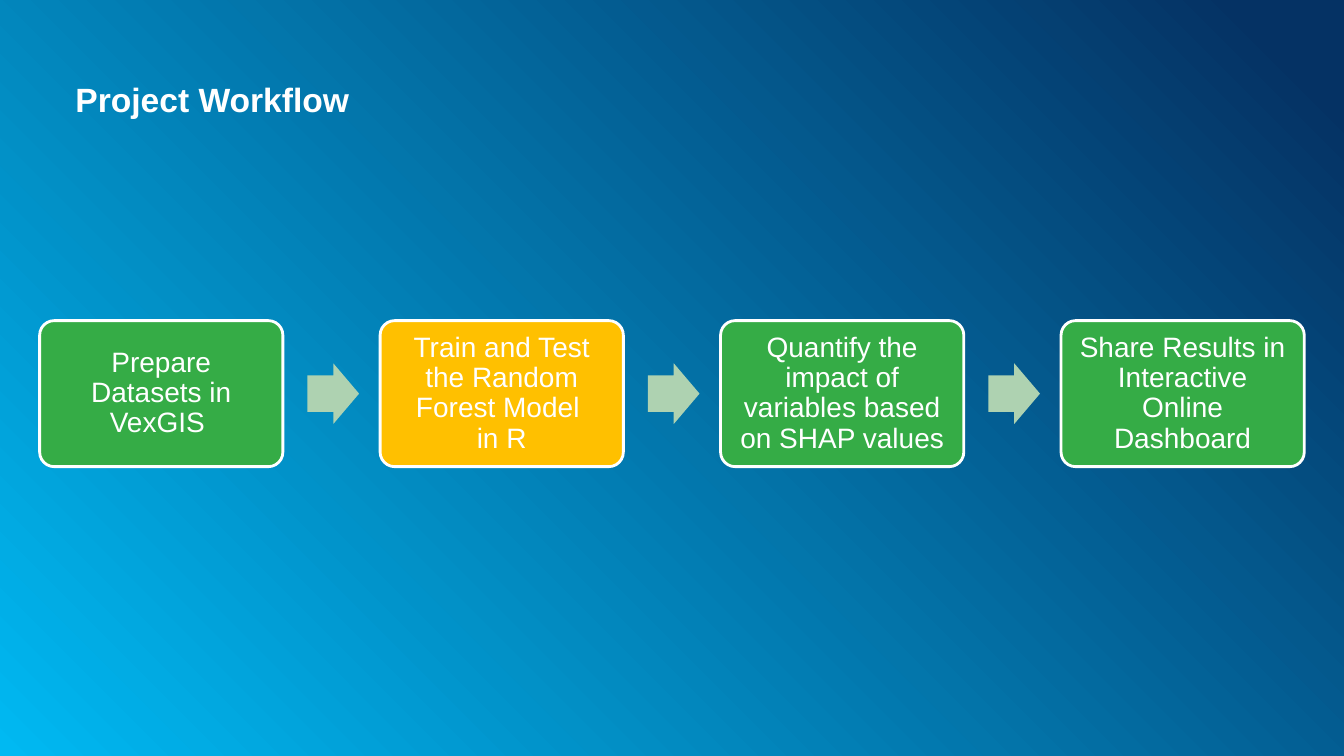
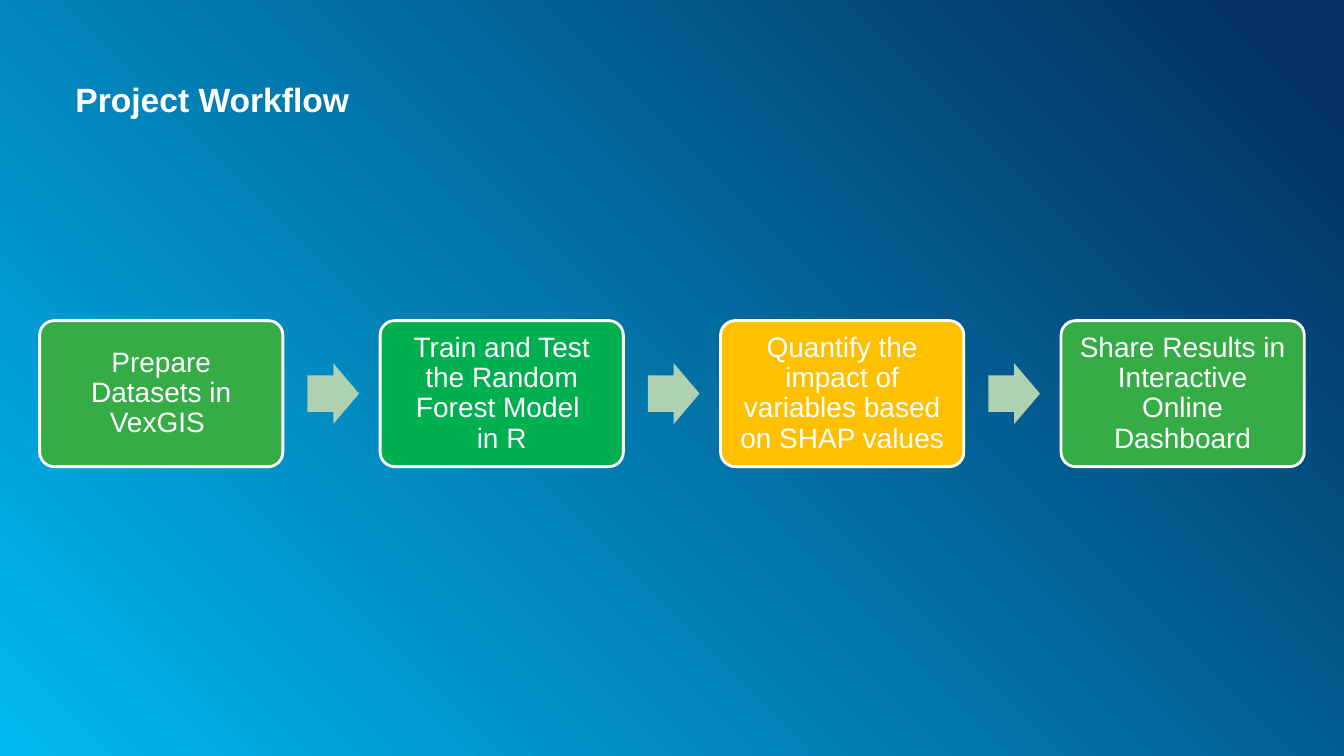
from lxml import etree
from pptx import Presentation
from pptx import util as u
from pptx.dml.color import RGBColor
from pptx.enum import shapes, text
from pptx.oxml.ns import qn

COLORS = {
    "white": "FFFFFF",
    "sky": "00B9F2",
    "navy": "053264",
    "step": "35AC46",
    "done": "00B050",
    "current": "FFC000",
    "arrow": "AED2B1",
}

# Each step is a list of lines; a single line wraps by itself
STEPS = [
    ["Prepare Datasets in VexGIS "],
    ["Train and Test the Random Forest Model ", "in R"],
    ["Quantify the impact of variables based on SHAP values"],
    ["Share Results in Interactive Online Dashboard"],
]

# Step colours, one row per slide
SLIDES = [
    ["step", "current", "step", "step"],
    ["step", "done", "current", "step"],
]

# Workflow row, in centimetres
ROW_LEFT, ROW_MIDDLE, PITCH = 1, 9.92, 8.58
BOX_W, BOX_H = 6.13, 3.68
ARROW_OFFSET, ARROW_W, ARROW_H = 6.75, 1.3, 1.53


class Deck:
    """Shared style and the slide being built."""

    font = "Arial"

    def __init__(self):
        self.prs = Presentation()
        self.prs.slide_width, self.prs.slide_height = u.Cm(33.87), u.Cm(19.05)
        self.slide = None
        self.background()

    def color(self, name):
        return RGBColor.from_string(COLORS[name])

    def background(self):
        """Radial gradient from the bottom left corner, on the master."""
        master = self.prs.slide_master
        fill = master.background.fill
        fill.gradient()
        for stop, name, position in zip(fill.gradient_stops, ("sky", "navy"), (0, 0.95)):
            stop.color.rgb = self.color(name)
            stop.position = position
        grad = master.element.find(".//" + qn("a:gradFill"))
        grad.remove(grad.find(qn("a:lin")))
        circle = etree.SubElement(grad, qn("a:path"), {"path": "circle"})
        etree.SubElement(circle, qn("a:fillToRect"), {"t": "100000", "r": "100000"})

    def run(self, p, words, size, bold=False):
        r = p.add_run()
        r.text = words
        r.font.name, r.font.size, r.font.bold = self.font, u.Pt(size), bold
        r.font.color.rgb = self.color("white")

    def new_slide(self, title):
        self.slide = self.prs.slides.add_slide(self.prs.slide_layouts[5])
        sp = self.slide.shapes.title
        sp.left, sp.top, sp.width, sp.height = map(u.Cm, (1.9, 1.9, 30.07, 1.88))
        tf = sp.text_frame
        tf.auto_size = text.MSO_AUTO_SIZE.NONE
        tf.vertical_anchor = text.MSO_ANCHOR.TOP
        tf.margin_left = tf.margin_right = tf.margin_bottom = 0
        tf.margin_top = u.Cm(0.08)
        p = tf.paragraphs[0]
        p.alignment = text.PP_ALIGN.LEFT
        self.run(p, title, 24, bold=True)

    def shape(self, kind, left, width, height, fill):
        """Add a plain filled shape, centred on the workflow row."""
        top = ROW_MIDDLE - height / 2
        sp = self.slide.shapes.add_shape(kind, *map(u.Cm, (left, top, width, height)))
        sp.shadow.inherit = False
        sp.fill.solid()
        sp.fill.fore_color.rgb = self.color(fill)
        sp.line.fill.background()
        return sp

    def step(self, left, lines, fill):
        sp = self.shape(shapes.MSO_SHAPE.ROUNDED_RECTANGLE, left, BOX_W, BOX_H, fill)
        sp.adjustments[0] = 0.1
        sp.line.color.rgb = self.color("white")
        sp.line.width = u.Pt(2)
        tf = sp.text_frame
        tf.word_wrap = True
        tf.vertical_anchor = text.MSO_ANCHOR.MIDDLE
        tf.margin_left = tf.margin_right = tf.margin_top = tf.margin_bottom = u.Cm(0.28)
        p = tf.paragraphs[0]
        p.alignment = text.PP_ALIGN.CENTER
        p.line_spacing = 0.9
        for i, line in enumerate(lines):
            if i:
                p.add_line_break()
            self.run(p, line, 20)

    def arrow(self, left):
        sp = self.shape(shapes.MSO_SHAPE.RIGHT_ARROW, left, ARROW_W, ARROW_H, "arrow")
        sp.adjustments[0], sp.adjustments[1] = 0.6, 0.5

    def workflow(self, fills):
        for i, (lines, fill) in enumerate(zip(STEPS, fills)):
            left = ROW_LEFT + i * PITCH
            self.step(left, lines, fill)
            if i < len(STEPS) - 1:
                self.arrow(left + ARROW_OFFSET)


def main():
    deck = Deck()
    for fills in SLIDES:
        deck.new_slide("Project Workflow")
        deck.workflow(fills)
    deck.prs.save("out.pptx")


if __name__ == "__main__":
    main()
